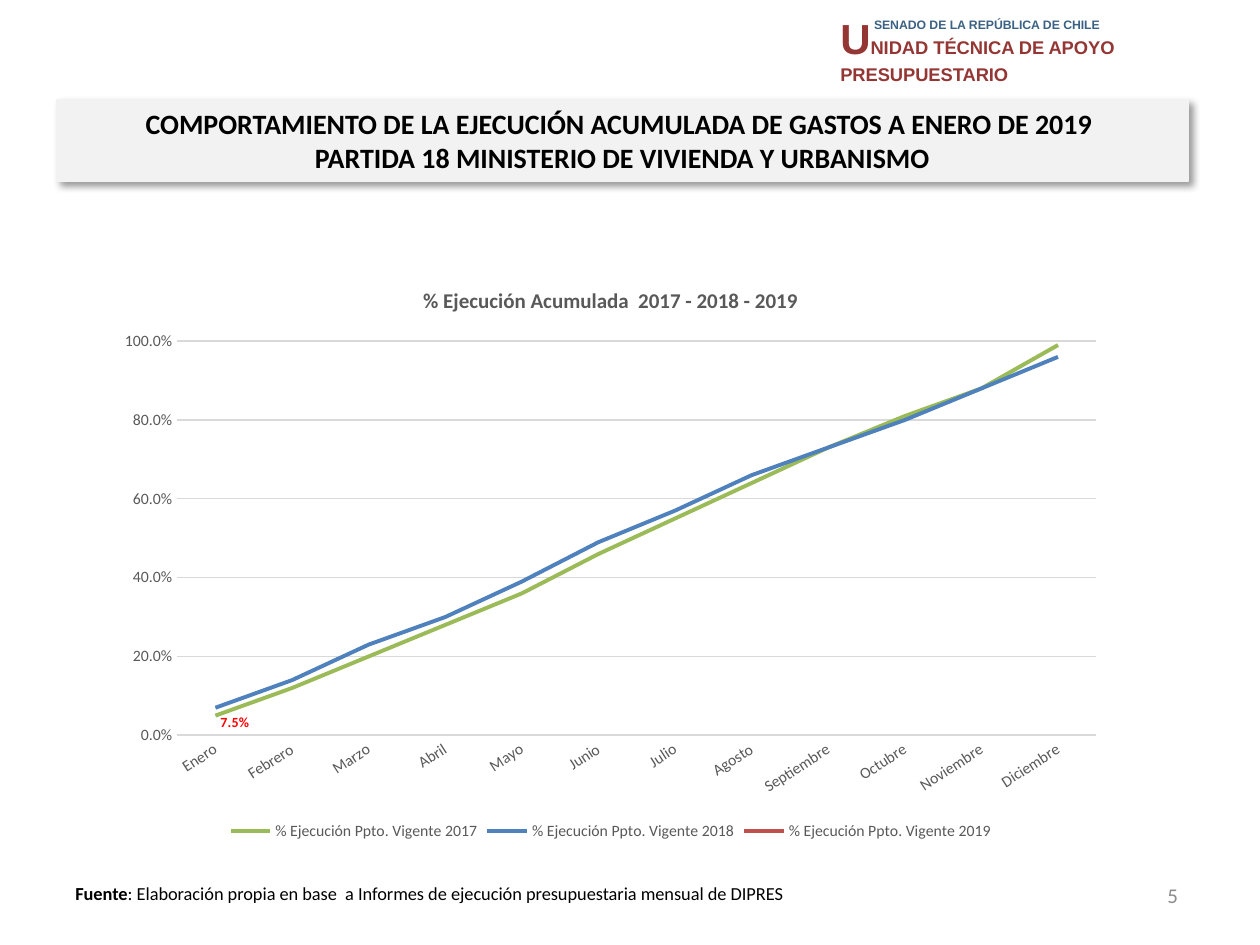
import lxml.etree
import pptx
import pptx.chart.data
import pptx.dml.color
import pptx.enum.chart
import pptx.enum.shapes
import pptx.enum.text
import pptx.oxml
import pptx.oxml.ns
import pptx.util

Cm, Pt = pptx.util.Cm, pptx.util.Pt
qn = pptx.oxml.ns.qn
ALIGN = pptx.enum.text.PP_ALIGN
ANCHOR = pptx.enum.text.MSO_ANCHOR

# Content
TITLE = ("COMPORTAMIENTO DE LA EJECUCIÓN ACUMULADA DE GASTOS A ENERO DE 2019 ",
         "PARTIDA 18 MINISTERIO DE VIVIENDA Y URBANISMO")
CHART_TITLE = "% Ejecución Acumulada  2017 - 2018 - 2019"
MONTHS = ["Enero", "Febrero", "Marzo", "Abril", "Mayo", "Junio", "Julio",
          "Agosto", "Septiembre", "Octubre", "Noviembre", "Diciembre"]
SERIES = {
    2017: [0.05, 0.12, 0.2, 0.28, 0.36, 0.46, 0.55, 0.64, 0.73, 0.81, 0.88, 0.99],
    2018: [0.07, 0.14, 0.23, 0.3, 0.39, 0.49, 0.57, 0.66, 0.73, 0.8, 0.88, 0.96],
    2019: [0.075] + [None] * 11,
}

THEME = {
    "panel": "F2F2F2", "grid": "D9D9D9",
    "lines": {2017: ("9BBB59", 2.25), 2018: ("4F81BD", 2.25), 2019: ("C0504D", 2.75)},
    "senate": {"name": "Arial", "size": 7, "bold": True, "color": "3B6285"},
    "initial": {"name": "Arial", "size": 24, "bold": True, "color": "943634"},
    "unit": {"name": "Arial", "size": 10.5, "bold": True, "color": "943634"},
    "title": {"name": "Calibri", "size": 16, "bold": True, "color": "000000"},
    "source_key": {"name": "Calibri", "size": 10.5, "bold": True, "color": "000000"},
    "source": {"name": "Calibri", "size": 10.5, "bold": False, "color": "000000"},
    "number": {"name": "Calibri", "size": 12, "bold": False, "color": "8C8C8C"},
    "chart": {"name": "Calibri", "size": 9, "bold": False, "color": "595959"},
    "chart_title": {"name": "Calibri", "size": 12, "bold": True, "color": "595959"},
    "label": {"name": "Calibri", "size": 8, "bold": True, "color": "FF0000"},
}

# Text boxes: place in cm, runs, paragraph and frame settings
BOXES = [
    ((17.09, 0.23, 6.07, 0.46), [("SENADO DE LA REPÚBLICA DE CHILE", "senate")],
     {}, {"margin_left": Cm(0.53)}),
    ((16.69, 0.13, 8.41, 1.27),
     [("U", "initial"), ("NIDAD TÉCNICA DE APOYO PRESUPUESTARIO", "unit")], {}, {}),
    ((1.27, 17.65, 15.01, 0.71),
     [("Fuente", "source_key"),
      (": Elaboración propia en base  a Informes de ejecución presupuestaria "
       "mensual de DIPRES", "source")], {}, {}),
    ((18.08, 17.53, 5.92, 1.02), [("5", "number")],
     {"alignment": ALIGN.RIGHT}, {"vertical_anchor": ANCHOR.MIDDLE}),
]


def rgb(value):
    return pptx.dml.color.RGBColor.from_string(value)


def assign(obj, values):
    for name, value in values.items():
        setattr(obj, name, value)


def style(font, key):
    fmt = dict(THEME[key])
    font.color.rgb = rgb(fmt.pop("color"))
    fmt["size"] = Pt(fmt["size"])
    assign(font, fmt)


def add_run(p, text, key):
    r = p.add_run()
    r.text = text
    style(r.font, key)


def stroke(line, color, width):
    line.color.rgb = rgb(color)
    line.width = Pt(width)


prs = pptx.Presentation()
prs.slide_width, prs.slide_height = Cm(25.4), Cm(19.05)
s = prs.slides.add_slide(prs.slide_layouts[6])

# Header, source note and slide number
for place, runs, para, frame in BOXES:
    tf = s.shapes.add_textbox(*map(Cm, place)).text_frame
    assign(tf, {"word_wrap": True, **frame})
    p = tf.paragraphs[0]
    assign(p, para)
    for text, key in runs:
        add_run(p, text, key)

# Title panel with a soft shadow
sp = s.shapes.add_shape(pptx.enum.shapes.MSO_SHAPE.RECTANGLE,
                        *map(Cm, (1.14, 2.01, 22.81, 1.65)))
sp.shadow.inherit = False
sp.fill.solid()
sp.fill.fore_color.rgb = rgb(THEME["panel"])
stroke(sp.line, THEME["panel"], 0.75)
effects = sp._element.spPr.find(qn("a:effectLst"))
shadow = lxml.etree.SubElement(effects, qn("a:outerShdw"), blurRad=str(Pt(4)),
                               dist=str(Pt(3)), dir="2700000", algn="tl", rotWithShape="0")
black = lxml.etree.SubElement(shadow, qn("a:srgbClr"), val="000000")
lxml.etree.SubElement(black, qn("a:alpha"), val="40000")
tf = sp.text_frame
assign(tf, {"word_wrap": True, "vertical_anchor": ANCHOR.MIDDLE})
p = tf.paragraphs[0]
p.alignment = ALIGN.CENTER
add_run(p, TITLE[0], "title")
p.add_line_break()
add_run(p, TITLE[1], "title")

# Line chart
data = pptx.chart.data.CategoryChartData(number_format="0.0%")
data.categories = MONTHS
for year, values in SERIES.items():
    data.add_series(f"% Ejecución Ppto. Vigente {year}", values)
chart = s.shapes.add_chart(pptx.enum.chart.XL_CHART_TYPE.LINE,
                           *map(Cm, (2.11, 5.33, 20.4, 11.71)), data).chart
style(chart.font, "chart")
add_run(chart.chart_title.text_frame.paragraphs[0], CHART_TITLE, "chart_title")
chart.has_legend = True
assign(chart.legend, {"position": pptx.enum.chart.XL_LEGEND_POSITION.BOTTOM,
                      "include_in_layout": False})
style(chart.legend.font, "chart")
chart.plots[0].vary_by_categories = False

# Axes
cat, val = chart.category_axis, chart.value_axis
for axis in (cat, val):
    axis.major_tick_mark = pptx.enum.chart.XL_TICK_MARK.NONE
    style(axis.tick_labels.font, "chart")
stroke(cat.format.line, THEME["grid"], 1)
cat._element.find(qn("c:txPr")).find(qn("a:bodyPr")).set("rot", "-1980000")
assign(val, {"minimum_scale": 0, "maximum_scale": 1, "major_unit": 0.2})
assign(val.tick_labels, {"number_format": "0.0%", "number_format_is_linked": False})
val.format.line.fill.background()
stroke(val.major_gridlines.format.line, THEME["grid"], 0.75)

# Series lines
for year, ser in zip(SERIES, chart.plots[0].series):
    ser.smooth = False
    ser.marker.style = pptx.enum.chart.XL_MARKER_STYLE.NONE
    stroke(ser.format.line, *THEME["lines"][year])

# Value label of the current year, moved just below its point
labels = ser.data_labels
assign(labels, {"show_value": True, "number_format": "0.0%",
                "number_format_is_linked": False})
style(labels.font, "label")
label = ser.points[0].data_label
style(label.font, "label")
label.position = pptx.enum.chart.XL_LABEL_POSITION.RIGHT
layout = pptx.oxml.parse_xml(
    '<c:layout xmlns:c="http://schemas.openxmlformats.org/drawingml/2006/chart">'
    '<c:manualLayout><c:x val="0"/><c:y val="0.03"/></c:manualLayout></c:layout>')
ser._element.find(".//" + qn("c:dLbl")).find(qn("c:idx")).addnext(layout)

prs.save("out.pptx")
